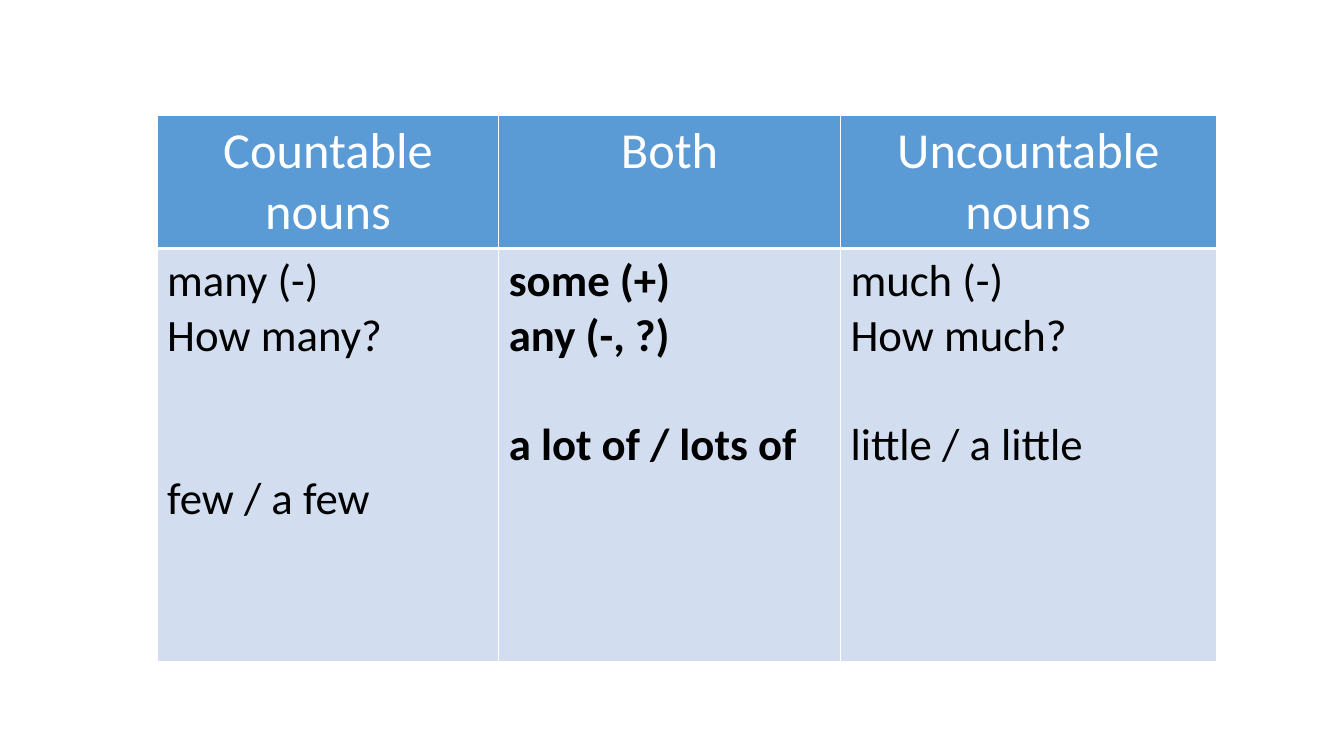
from dataclasses import dataclass

from lxml.etree import SubElement
from pptx import Presentation
from pptx.dml.color import RGBColor
from pptx.enum.text import PP_ALIGN as Align
from pptx.oxml.ns import qn
from pptx.util import Cm, Pt


@dataclass(frozen=True)
class Theme:
    font: str = "Calibri"
    header_size: int = 36
    body_size: int = 32
    line_height: int = 39
    header_fill: str = "5B9BD5"
    body_fill: str = "D2DEEF"
    header_text: str = "FFFFFF"
    body_text: str = "000000"
    border: str = "FFFFFF"
    thin: int = 1
    thick: int = 3


THEME = Theme()
COLUMN_WIDTHS = (8.61, 8.61, 9.47)
ROW_HEIGHTS = (3.3, 10.41)

# Each column: heading, lines, empty lines before the last line, bold
COLUMNS = (
    ("Countable nouns", ("many (-)", "How many?", "few / a few"), 2, False),
    ("Both", ("some (+)", "any (-, ?)", "a lot of / lots of"), 1, True),
    ("Uncountable nouns", ("much (-)", "How much?", "little / a little"), 1, False),
)


def style_cell(cell, fill, bottom_width):
    properties = cell._tc.get_or_add_tcPr()
    widths = {"L": THEME.thin, "R": THEME.thin, "T": THEME.thin, "B": bottom_width}
    for side, width in widths.items():
        line = SubElement(properties, qn(f"a:ln{side}"), w=str(Pt(width)))
        solid = SubElement(line, qn("a:solidFill"))
        SubElement(solid, qn("a:srgbClr"), val=THEME.border)
    cell.fill.solid()
    cell.fill.fore_color.rgb = RGBColor.from_string(fill)


def add_span(para, text, size, color, bold=False):
    span = para.add_run()
    span.text = text
    span.font.name = THEME.font
    span.font.size = Pt(size)
    span.font.bold = bold
    span.font.color.rgb = RGBColor.from_string(color)


def fill_header(cell, heading):
    style_cell(cell, THEME.header_fill, THEME.thick)
    para = cell.text_frame.paragraphs[0]
    para.alignment = Align.CENTER
    add_span(para, heading, THEME.header_size, THEME.header_text)


def fill_body(cell, lines, gap_lines, bold):
    style_cell(cell, THEME.body_fill, THEME.thin)
    frame = cell.text_frame
    for index, text in enumerate(lines):
        para = frame.add_paragraph() if index else frame.paragraphs[0]
        add_span(para, text, THEME.body_size, THEME.body_text, bold)
    para.space_before = Pt(gap_lines * THEME.line_height)


def add_noun_table(page):
    frame = page.shapes.add_table(
        len(ROW_HEIGHTS), len(COLUMNS), Cm(3.96), Cm(2.9),
        Cm(sum(COLUMN_WIDTHS)), Cm(sum(ROW_HEIGHTS)),
    )
    table = frame.table
    for row, height in zip(table.rows, ROW_HEIGHTS):
        row.height = Cm(height)
    for index, (heading, lines, gap_lines, bold) in enumerate(COLUMNS):
        table.columns[index].width = Cm(COLUMN_WIDTHS[index])
        fill_header(table.cell(0, index), heading)
        fill_body(table.cell(1, index), lines, gap_lines, bold)


def main():
    deck = Presentation()
    deck.slide_width = Cm(33.87)
    deck.slide_height = Cm(19.05)
    page = deck.slides.add_slide(deck.slide_layouts[6])
    add_noun_table(page)
    deck.save("out.pptx")


if __name__ == "__main__":
    main()
